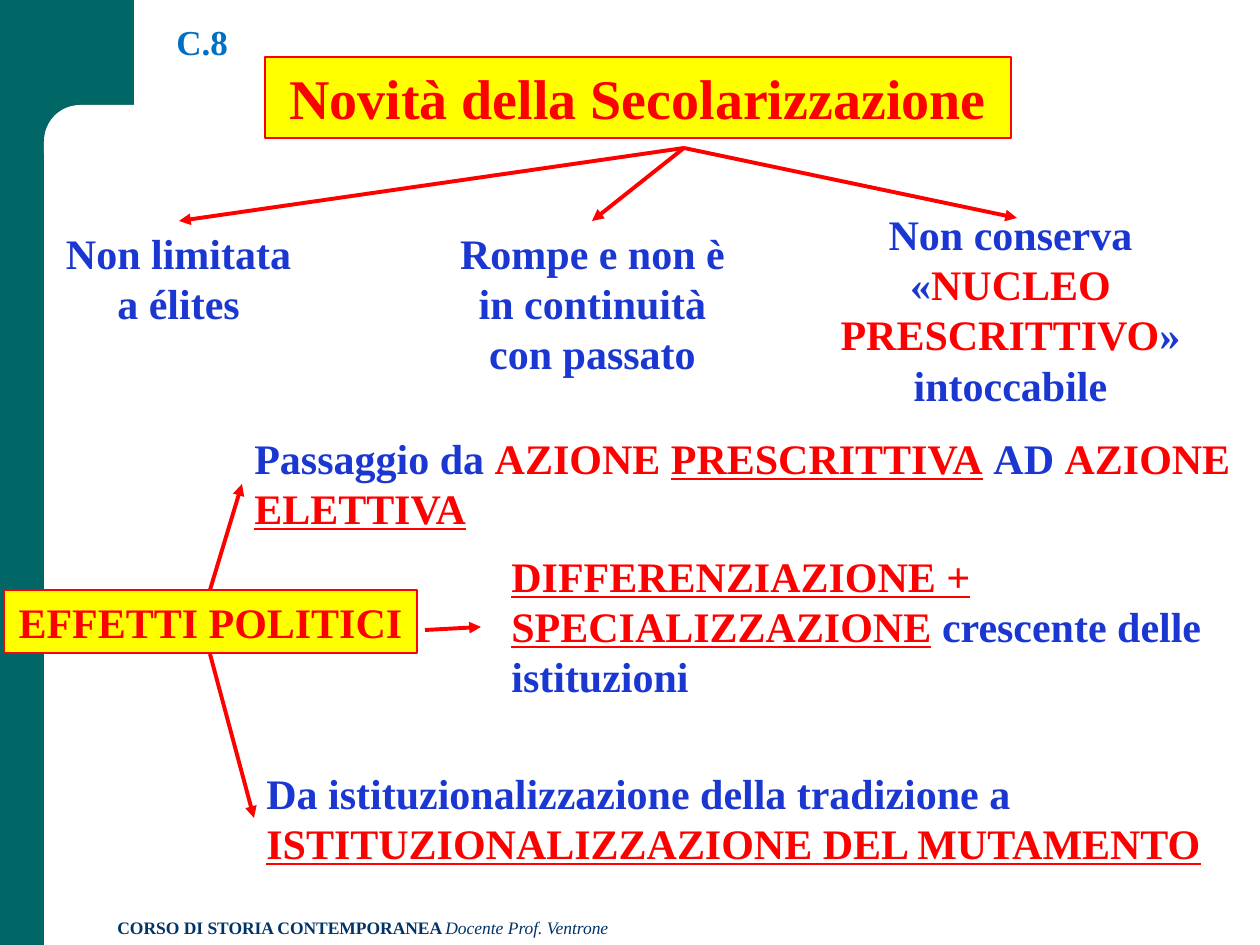
from lxml import etree
from pptx import Presentation
from pptx import util as u
from pptx.dml.color import RGBColor
from pptx.enum import shapes, text
from pptx.oxml.ns import qn

SCALE = 914400 / 126
FONT = "Times New Roman"
GREEN, WHITE, YELLOW = "006666", "FFFFFF", "FFFF00"
RED, BLUE, NAVY, SKY = "FF0000", "1B37D1", "003366", "0070C0"
LEFT, CENTER = text.PP_ALIGN.LEFT, text.PP_ALIGN.CENTER


def px(length):
    """Turn px into EMU."""
    return u.Emu(round(length * SCALE))


def colour(value):
    """Turn a hex string into a colour."""
    return RGBColor.from_string(value)


def shifted(box, left, top, width, height):
    """Return a rectangle given relative to a box."""
    return box[0] + left, box[1] + top, width, height


def write(shape, runs, size, align=LEFT, wrap=True, anchor=text.MSO_ANCHOR.TOP):
    """Fill a shape with one paragraph of (words, colour, style flags) runs."""
    frame = shape.text_frame
    frame.word_wrap = wrap
    frame.vertical_anchor = anchor
    paragraph = frame.paragraphs[0]
    paragraph.alignment = align
    for words, hue, flags in runs:
        run = paragraph.add_run()
        run.text = words
        run.font.name = FONT
        run.font.size = u.Pt(size)
        run.font.color.rgb = colour(hue)
        run.font.bold = "b" in flags
        run.font.italic = "i" in flags
        run.font.underline = "u" in flags


def add_text(slide, box, runs, size=24, **layout):
    """Add a text box."""
    write(slide.shapes.add_textbox(*map(px, box)), runs, size, **layout)


def add_panel(slide, box, fill, kind=shapes.MSO_SHAPE.RECTANGLE):
    """Add a plain filled shape without an outline."""
    shape = slide.shapes.add_shape(kind, *map(px, box))
    shape.shadow.inherit = False
    shape.fill.solid()
    shape.fill.fore_color.rgb = colour(fill)
    shape.line.fill.background()
    return shape


def add_label(slide, box, words, size, wrap=True):
    """Add a yellow label with a red outline and red words."""
    shape = add_panel(slide, box, YELLOW)
    shape.line.color.rgb = colour(RED)
    shape.line.width = u.Pt(0.75)
    write(shape, [(words, RED, "b")], size, CENTER, wrap, text.MSO_ANCHOR.MIDDLE)


def add_arrow(slide, box, start, end):
    """Add a red arrow between two points given relative to a box."""
    points = [px(box[axis] + point[axis]) for point in (start, end) for axis in (0, 1)]
    arrow = slide.shapes.add_connector(shapes.MSO_CONNECTOR.STRAIGHT, *points)
    arrow.line.color.rgb = colour(RED)
    arrow.line.width = u.Pt(2.25)
    etree.SubElement(arrow.line._get_or_add_ln(), qn("a:tailEnd"), type="triangle")
    etree.SubElement(arrow._element.spPr, qn("a:effectLst"))


def draw_frame(slide, box):
    """Draw the green edge and its rounded inner corner."""
    add_panel(slide, shifted(box, 0, 0, 44, box[3]), GREEN)
    add_panel(slide, shifted(box, 0, 0, 134, 147), GREEN)
    corner = add_panel(slide, shifted(box, 44, 105, 764, 84), WHITE,
                       shapes.MSO_SHAPE.ROUNDED_RECTANGLE)
    corner.adjustments[0] = 0.43


def draw_header(slide, box):
    """Draw the section number and the heading."""
    add_text(slide, shifted(box, 0, 0, 116, 69), [("C.8", SKY, "b")], 20,
             anchor=text.MSO_ANCHOR.BOTTOM)
    add_label(slide, shifted(box, 101, 57, 746, 81), "Novità della Secolarizzazione", 32)


def draw_novelties(slide, box):
    """Draw the three novelties under arrows that fan out from the heading."""
    novelties = [
        ((42, 73, 273, 115), (179, 73), [("Non limitata a élites", BLUE, "b")]),
        ((431, 73, 323, 165), (592, 73),
         [("Rompe e non è in continuità con passato", BLUE, "b")]),
        ((800, 54, 421, 217), (1017, 70),
         [("Non conserva «", BLUE, "b"), ("NUCLEO PRESCRITTIVO", RED, "b"),
          ("» intoccabile", BLUE, "b")]),
    ]
    for place, tip, runs in novelties:
        add_text(slide, shifted(box, *place), runs, align=CENTER)
        add_arrow(slide, box, (684, 0), tip)


def draw_effects(slide, box):
    """Draw the political effects label with arrows to its three effects."""
    add_label(slide, shifted(box, 4, 164, 413, 63), "EFFETTI POLITICI", 24, wrap=False)
    effects = [
        ((242, 0, 1021, 115), (210, 164), (242, 58),
         [("Passaggio da ", BLUE, "b"), ("AZIONE ", RED, "b"),
          ("PRESCRITTIVA", RED, "bu"), (" ", RED, "b"), ("AD ", BLUE, "b"),
          ("AZIONE ", RED, "b"), ("ELETTIVA", RED, "bu")]),
        ((499, 118, 798, 165), (425, 204), (481, 201),
         [("DIFFERENZIAZIONE + SPECIALIZZAZIONE", RED, "bu"), (" ", RED, "b"),
          ("crescente delle istituzioni", BLUE, "b")]),
        ((254, 335, 967, 115), (210, 228), (254, 392),
         [("Da istituzionalizzazione della tradizione a ", BLUE, "b"),
          ("ISTITUZIONALIZZAZIONE DEL MUTAMENTO", RED, "bu")]),
    ]
    for place, start, tip, runs in effects:
        add_text(slide, shifted(box, *place), runs)
        add_arrow(slide, box, start, tip)


def draw_footer(slide, box):
    """Draw the course and teacher line."""
    add_text(slide, box, [("CORSO DI STORIA CONTEMPORANEA ", NAVY, "b"),
                          ("Docente Prof. Ventrone", NAVY, "i")], 10)


def main():
    """Build the slide and save it."""
    presentation = Presentation()
    presentation.slide_width, presentation.slide_height = px(1260), px(945)
    slide = presentation.slides.add_slide(presentation.slide_layouts[6])
    draw_frame(slide, (0, 0, 1260, 945))
    draw_footer(slide, (105, 911, 777, 34))
    draw_header(slide, (164, 0, 847, 138))
    draw_novelties(slide, (0, 148, 1260, 271))
    draw_effects(slide, (0, 426, 1260, 450))
    presentation.save("out.pptx")


if __name__ == "__main__":
    main()
